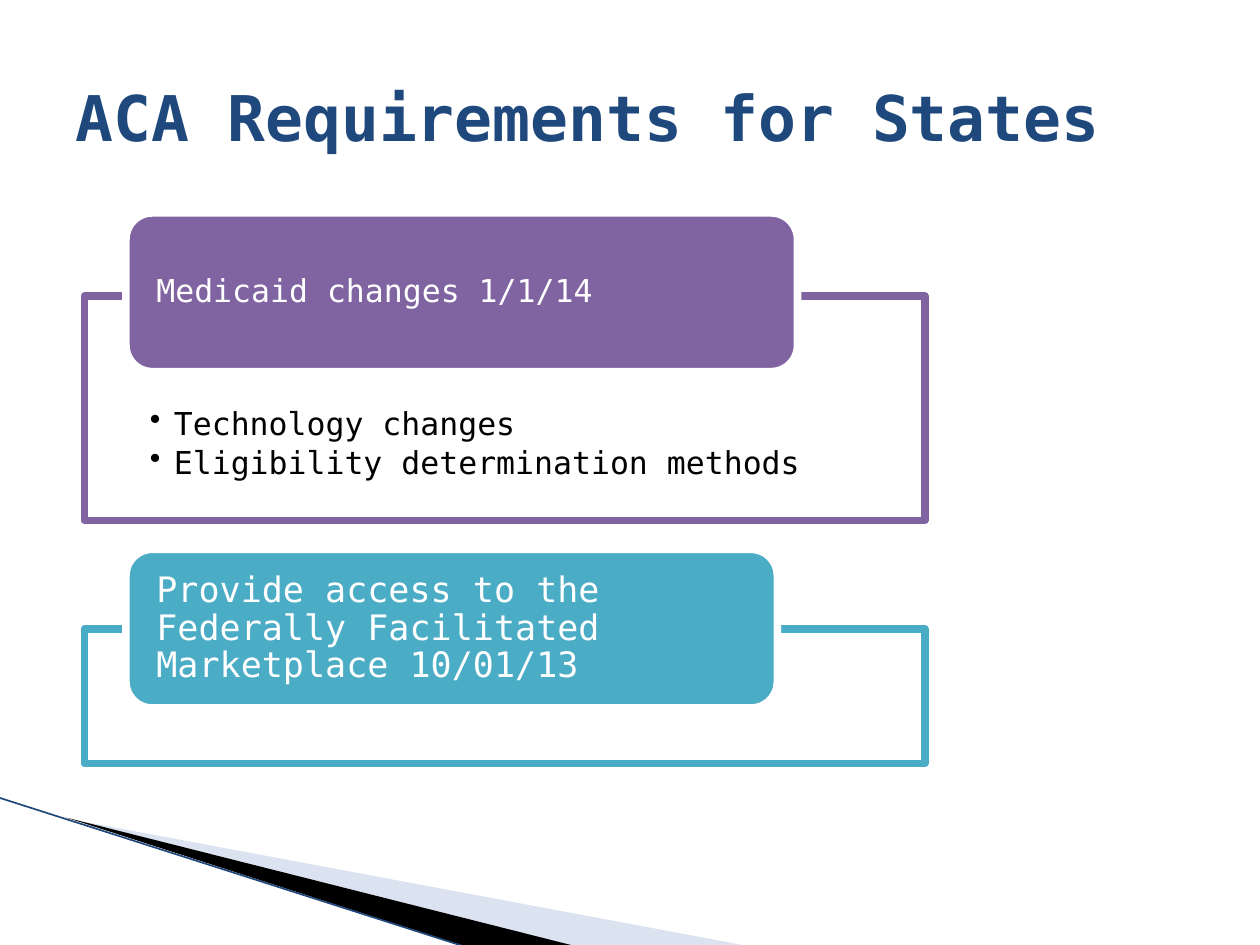
from lxml import etree
from pptx import Presentation
from pptx.dml.color import RGBColor
from pptx.enum import shapes, text
from pptx.oxml import ns
from pptx.util import Inches, Pt

FONT = "DejaVu Sans Mono"
COLORS = {
    "navy": "1F497D", "purple": "8064A2", "teal": "4BACC6",
    "white": "FFFFFF", "black": "000000", "pale": "DCE3F0",
}
TITLE = "ACA Requirements for States"
SECTIONS = [
    {"heading": "Medicaid changes 1/1/14", "size": 18, "color": "purple",
     "header": (1, 1.69, 5.33, 1.26), "panel": (0.67, 2.35, 6.67, 1.78),
     "bullets": ["Technology changes", "Eligibility determination methods"]},
    {"heading": "Provide access to the Federally Facilitated Marketplace 10/01/13",
     "size": 20, "color": "teal",
     "header": (1, 4.36, 5.17, 1.26), "panel": (0.67, 4.99, 6.67, 1.07),
     "bullets": []},
]
WEDGES = [
    ("pale", [(0.55, 6.5), (5.95, 7.51), (4.56, 7.51)]),
    ("black", [(0.53, 6.49), (4.57, 7.51), (3.72, 7.52)]),
]
HEADER_INSETS = (0.18, 0, 0.18, 0)
PANEL_INSETS = (0.52, 0.89, 0.52, 0.14)
BULLET_INDENT = 0.19
BORDER = 4.33


def rgb(name):
    return RGBColor.from_string(COLORS[name])


def apply(target, values):
    for name, value in values.items():
        setattr(target, name, value)


def style_font(paragraph, size, color, bold=False):
    apply(paragraph.font, {"name": FONT, "size": Pt(size), "bold": bold})
    paragraph.font.color.rgb = rgb(color)


def paint(shape, fill, line=None):
    shape.shadow.inherit = False
    shape.fill.solid()
    shape.fill.fore_color.rgb = rgb(fill)
    if line:
        shape.line.color.rgb = rgb(line)
        shape.line.width = Pt(BORDER)
    else:
        shape.line.fill.background()


def add_box(slide, kind, place, fill, line):
    shape = slide.shapes.add_shape(kind, *map(Inches, place))
    paint(shape, fill, line)
    return shape


def write(shape, lines, size, color, insets, anchor, space_after, bulleted=False):
    frame = shape.text_frame
    left, top, right, bottom = map(Inches, insets)
    apply(frame, {"margin_left": left, "margin_top": top, "margin_right": right,
                  "margin_bottom": bottom, "word_wrap": True, "vertical_anchor": anchor})
    for index, line in enumerate(lines):
        paragraph = frame.paragraphs[0] if index == 0 else frame.add_paragraph()
        paragraph.text = line
        apply(paragraph, {"alignment": text.PP_ALIGN.LEFT, "line_spacing": 0.9,
                          "space_after": Pt(size * space_after)})
        if bulleted:
            properties = paragraph._p.get_or_add_pPr()
            properties.set("marL", str(Inches(BULLET_INDENT)))
            properties.set("indent", str(-Inches(BULLET_INDENT)))
            etree.SubElement(properties, ns.qn("a:buChar")).set("char", "•")
        style_font(paragraph, size, color)


def add_swoosh(slide):
    for color, points in WEDGES:
        corners = [(Inches(x), Inches(y)) for x, y in points]
        builder = slide.shapes.build_freeform(*corners[0])
        builder.add_line_segments(corners[1:], close=True)
        paint(builder.convert_to_shape(), color)
    edge = slide.shapes.add_connector(
        shapes.MSO_CONNECTOR.STRAIGHT, *map(Inches, (-0.01, 6.33, 3.71, 7.52)))
    edge.line.color.rgb = rgb("navy")
    edge.line.width = Pt(0.95)
    etree.SubElement(edge._element.spPr, ns.qn("a:effectLst"))


def add_title(slide):
    title = slide.shapes.title
    apply(title, {"left": Inches(0.5), "top": Inches(0.3),
                  "width": Inches(9), "height": Inches(1.25)})
    title.text_frame.text = TITLE
    title.text_frame.vertical_anchor = text.MSO_ANCHOR.MIDDLE
    paragraph = title.text_frame.paragraphs[0]
    paragraph.alignment = text.PP_ALIGN.LEFT
    style_font(paragraph, 36, "navy", bold=True)


def add_section(slide, section):
    panel = add_box(slide, shapes.MSO_SHAPE.RECTANGLE, section["panel"],
                    "white", section["color"])
    if section["bullets"]:
        write(panel, section["bullets"], 18, "black", PANEL_INSETS,
              text.MSO_ANCHOR.TOP, 0.15, bulleted=True)
    header = add_box(slide, shapes.MSO_SHAPE.ROUNDED_RECTANGLE, section["header"],
                     section["color"], "white")
    write(header, [section["heading"]], section["size"], "white", HEADER_INSETS,
          text.MSO_ANCHOR.MIDDLE, 0.35)


def main():
    presentation = Presentation()
    apply(presentation, {"slide_width": Inches(10), "slide_height": Inches(7.5)})
    slide = presentation.slides.add_slide(presentation.slide_layouts[5])
    add_swoosh(slide)
    add_title(slide)
    for section in SECTIONS:
        add_section(slide, section)
    presentation.save("out.pptx")


if __name__ == "__main__":
    main()
